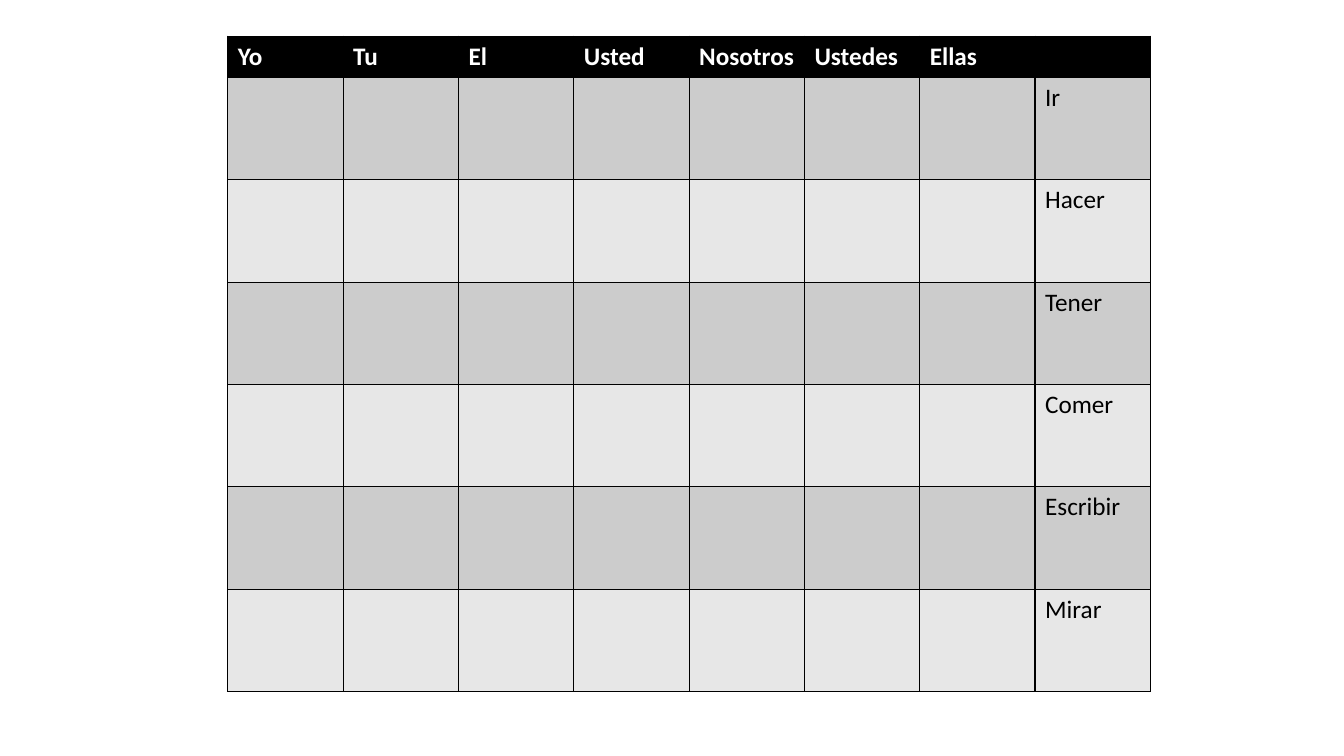
from lxml.etree import SubElement
from pptx import Presentation
from pptx.dml.color import RGBColor
from pptx.oxml.ns import qn
from pptx.util import Inches, Pt

BLACK = RGBColor(0x00, 0x00, 0x00)
WHITE = RGBColor(0xFF, 0xFF, 0xFF)
DARK_BAND = RGBColor(0xCC, 0xCC, 0xCC)
LIGHT_BAND = RGBColor(0xE7, 0xE7, 0xE7)

PRONOUNS = ["Yo", "Tu", "El", "Usted", "Nosotros", "Ustedes", "Ellas"]
VERBS = ["Ir", "Hacer", "Tener", "Comer", "Escribir", "Mirar"]

TABLE_WIDTH = 9.15
TABLE_HEIGHT = 6.5
HEADER_HEIGHT = 0.41


def add_borders(cell):
    """Draw a thin black line on each side; borders come before the fill."""
    properties = cell._tc.get_or_add_tcPr()
    for side in ("a:lnL", "a:lnR", "a:lnT", "a:lnB"):
        line = SubElement(properties, qn(side), w=str(Pt(1)))
        fill = SubElement(line, qn("a:solidFill"))
        SubElement(fill, qn("a:srgbClr"), val=str(BLACK))


def style_cell(cell, color):
    add_borders(cell)
    cell.fill.solid()
    cell.fill.fore_color.rgb = color
    cell.text_frame.paragraphs[0].font.size = Pt(18)


def write_cell(cell, text, color, bold):
    span = cell.text_frame.paragraphs[0].add_run()
    span.text = text
    span.font.name = "Calibri"
    span.font.size = Pt(18)
    span.font.bold = bold
    span.font.color.rgb = color


def add_verb_table(page):
    row_count, column_count = len(VERBS) + 1, len(PRONOUNS) + 1
    table = page.shapes.add_table(
        row_count, column_count, Inches(2.26), Inches(0.36),
        Inches(TABLE_WIDTH), Inches(TABLE_HEIGHT)).table

    # Equal columns, a low header and equal verb rows
    for column in table.columns:
        column.width = Inches(TABLE_WIDTH / column_count)
    for row in table.rows:
        row.height = Inches((TABLE_HEIGHT - HEADER_HEIGHT) / len(VERBS))
    table.rows[0].height = Inches(HEADER_HEIGHT)

    # Black header over alternating grey bands
    for index, row in enumerate(table.rows):
        band = DARK_BAND if index % 2 else LIGHT_BAND
        for cell in row.cells:
            style_cell(cell, band if index else BLACK)

    # Pronouns across the top, verbs down the last column
    for column, pronoun in enumerate(PRONOUNS):
        write_cell(table.cell(0, column), pronoun, WHITE, True)
    for row, verb in enumerate(VERBS, start=1):
        write_cell(table.cell(row, column_count - 1), verb, BLACK, False)


def main():
    deck = Presentation()
    deck.slide_width = Inches(13.33)
    deck.slide_height = Inches(7.5)
    page = deck.slides.add_slide(deck.slide_layouts[6])
    add_verb_table(page)
    deck.save("out.pptx")


if __name__ == "__main__":
    main()
